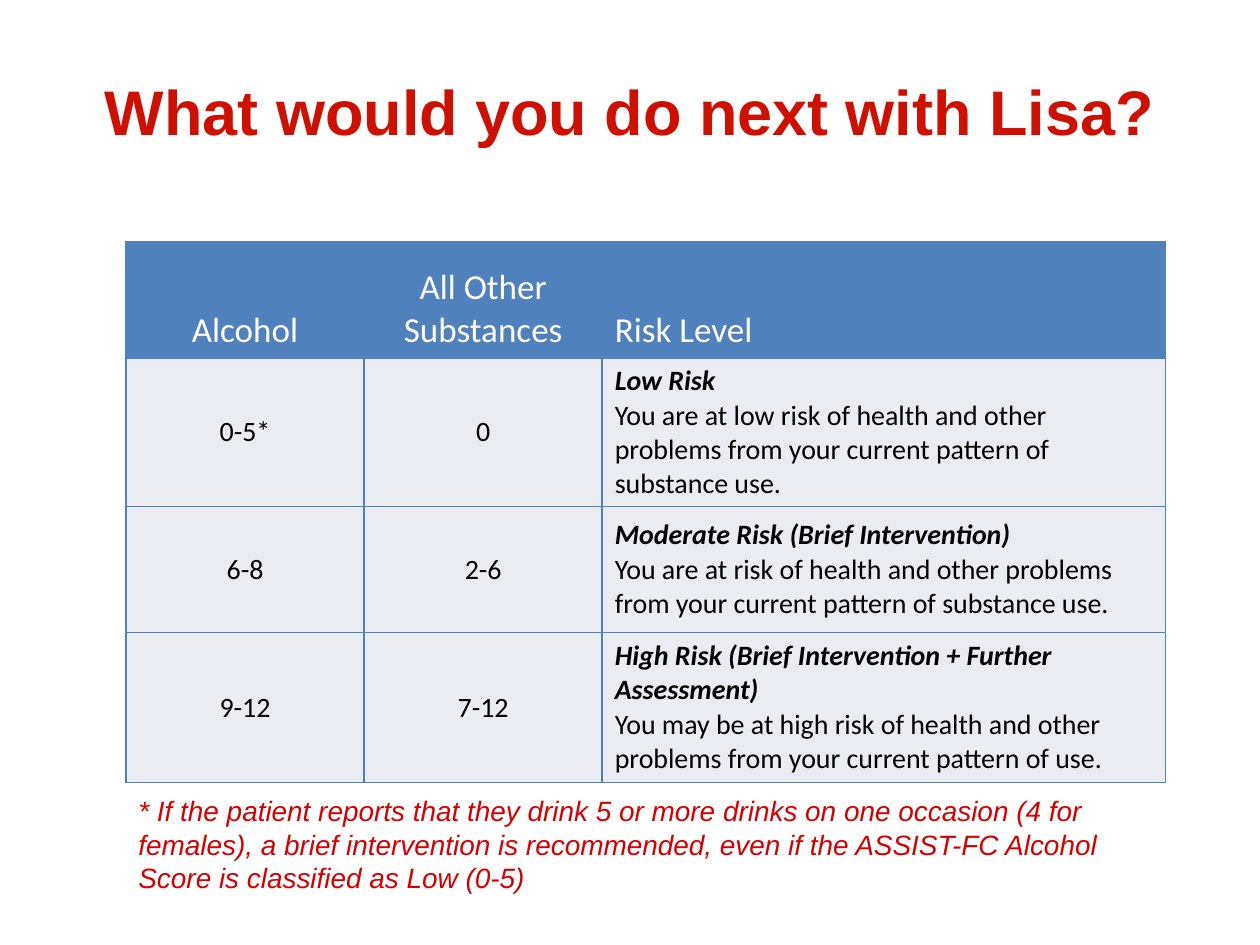
from lxml import etree
from pptx import Presentation, util as u
from pptx.dml.color import RGBColor
from pptx.enum import text as t
from pptx.oxml import parse_xml
from pptx.oxml.ns import nsdecls

TITLE = "What would you do next with Lisa?"
HEADER = ["Alcohol", "All Other Substances", "Risk Level"]
LEVELS = [
    ("0-5*", "0", "Low Risk",
     "You are at low risk of health and other problems from your current pattern of substance use."),
    ("6-8", "2-6", "Moderate Risk (Brief Intervention)",
     "You are at risk of health and other problems from your current pattern of substance use."),
    ("9-12", "7-12", "High Risk (Brief Intervention + Further Assessment)",
     "You may be at high risk of health and other problems from your current pattern of use."),
]
NOTE = ("* If the patient reports that they drink 5 or more drinks on one occasion (4 for females), "
        "a brief intervention is recommended, even if the ASSIST-FC Alcohol Score is classified as Low (0-5)")

THEME = {
    "title": {"font": "Arial", "size": 36, "color": "CF1001", "bold": True},
    "header": {"font": "Calibri", "size": 20, "color": "FFFFFF"},
    "body": {"font": "Calibri", "size": 16, "color": "000000"},
    "note": {"font": "Arial", "size": 16, "color": "D60000", "italic": True},
    "header_fill": "4F81BD", "body_fill": "EAECF2", "border": "4F81BD",
}
LEFT, WIDTH = 1, 8.25
TABLE_TOP = 1.92
COLUMNS = [1.89, 1.89, 4.47]
ROWS = [0.92, 1.18, 1, 1.19]
CENTER, START = t.PP_ALIGN.CENTER, t.PP_ALIGN.LEFT
MIDDLE, BOTTOM = t.MSO_ANCHOR.MIDDLE, t.MSO_ANCHOR.BOTTOM


def write(para, words, align=START, font="Arial", size=16, color="000000", bold=False, italic=False):
    para.alignment = align
    span = para.add_run()
    span.text = words
    span.font.name = font
    span.font.size = u.Pt(size)
    span.font.color.rgb = RGBColor.from_string(color)
    span.font.bold = bold
    span.font.italic = italic


def add_text(page, place, words, anchor, **style):
    box = page.shapes.add_textbox(*map(u.Inches, place))
    box.text_frame.word_wrap = True
    box.text_frame.vertical_anchor = anchor
    write(box.text_frame.paragraphs[0], words, **style)


def paint_cell(cell, fill, anchor):
    cell.vertical_anchor = anchor
    cell.fill.solid()
    cell.fill.fore_color.rgb = RGBColor.from_string(fill)
    properties = cell._tc.get_or_add_tcPr()
    for index, side in enumerate("LRTB"):
        line = parse_xml(f'<a:ln{side} {nsdecls("a")} w="{u.Pt(1)}"/>')
        solid = etree.SubElement(line, "{%s}solidFill" % line.nsmap["a"])
        etree.SubElement(solid, "{%s}srgbClr" % line.nsmap["a"], val=THEME["border"])
        properties.insert(index, line)


def add_risk_table(page):
    place = map(u.Inches, (LEFT, TABLE_TOP, WIDTH, sum(ROWS)))
    table = page.shapes.add_table(len(ROWS), len(COLUMNS), *place).table
    table.horz_banding = False
    for column, width in zip(table.columns, COLUMNS):
        column.width = u.Inches(width)
    for row, height in zip(table.rows, ROWS):
        row.height = u.Inches(height)
    aligns = [CENTER, CENTER, START]
    for cell, words, align in zip(table.rows[0].cells, HEADER, aligns):
        paint_cell(cell, THEME["header_fill"], BOTTOM)
        write(cell.text_frame.paragraphs[0], words, align, **THEME["header"])
    for number, (*values, advice) in enumerate(LEVELS, 1):
        for column, (words, align) in enumerate(zip(values, aligns)):
            cell = table.cell(number, column)
            paint_cell(cell, THEME["body_fill"], MIDDLE)
            para = cell.text_frame.paragraphs[0]
            is_risk = column == len(COLUMNS) - 1
            write(para, words, align, bold=is_risk, italic=is_risk, **THEME["body"])
            if is_risk:
                para.add_line_break()
                write(para, advice, align, **THEME["body"])


def main():
    deck = Presentation()
    deck.slide_width, deck.slide_height = u.Inches(10), u.Inches(7.5)
    page = deck.slides.add_slide(deck.slide_layouts[6])
    add_text(page, (0.5, 0.25, 9, 1.25), TITLE, MIDDLE, align=CENTER, **THEME["title"])
    add_risk_table(page)
    add_text(page, (LEFT, 6.25, WIDTH, 0.91), NOTE, t.MSO_ANCHOR.TOP, **THEME["note"])
    deck.save("out.pptx")


if __name__ == "__main__":
    main()
